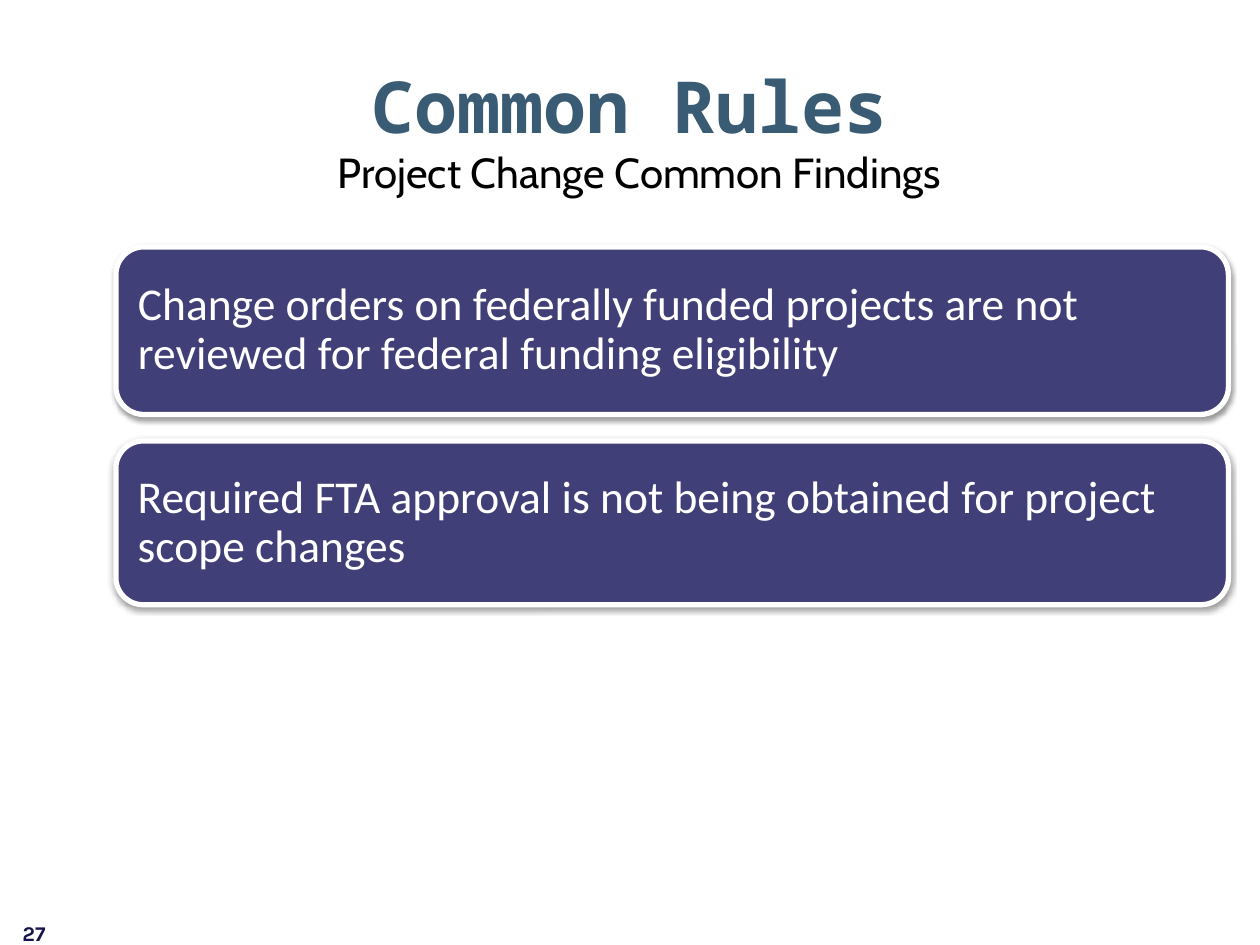
from dataclasses import dataclass

from lxml import etree
from pptx import Presentation
from pptx.dml.color import RGBColor
from pptx.enum.shapes import MSO_SHAPE as Shape
from pptx.enum.text import MSO_ANCHOR as Anchor, PP_ALIGN as Align
from pptx.oxml.ns import qn
from pptx.util import Inches, Pt

WHITE = RGBColor(0xFF, 0xFF, 0xFF)
BLACK = RGBColor(0x00, 0x00, 0x00)
INDIGO = RGBColor(0x41, 0x3F, 0x77)
SLATE = RGBColor(0x39, 0x5B, 0x74)
NAVY = RGBColor(0x17, 0x14, 0x4D)


@dataclass
class Style:
    font: str
    size: float
    color: RGBColor
    bold: bool = False
    align: Align = Align.LEFT


@dataclass
class Label:
    text: str
    left: float
    top: float
    width: float
    height: float
    style: Style


@dataclass
class Finding:
    text: str
    top: float
    height: float


FINDING_STYLE = Style("Calibri", 26, WHITE)

LABELS = [
    Label("Project Change Common Findings", 0.92, 1.11, 8.31, 0.5,
          Style("Cabin", 24, BLACK, align=Align.CENTER)),
    Label("Common Rules", 0.5, 0.44, 9, 1.07,
          Style("Noto Sans Mono", 41, SLATE, True, Align.CENTER)),
    Label("27", 0.08, 7.26, 2.33, 0.4, Style("Karla", 12, NAVY, True)),
]

FINDINGS = [
    Finding("Change orders on federally funded projects are not reviewed "
            "for federal funding eligibility", 1.96, 1.33),
    Finding("Required FTA approval is not being obtained for project "
            "scope changes", 3.5, 1.3),
]


def write_text(tf, text: str, style: Style) -> None:
    tf.word_wrap = True
    tf.text = text
    p = tf.paragraphs[0]
    p.alignment = style.align
    font = p.runs[0].font
    font.name, font.size, font.bold = style.font, Pt(style.size), style.bold
    font.color.rgb = style.color


def add_label(s, label: Label) -> None:
    box = s.shapes.add_textbox(Inches(label.left), Inches(label.top),
                               Inches(label.width), Inches(label.height))
    write_text(box.text_frame, label.text, label.style)


def add_shadow(sp) -> None:
    """Soft black shadow straight below the shape."""
    sp.shadow.inherit = False
    effects = sp._element.spPr.find(qn("a:effectLst"))
    shadow = etree.SubElement(effects, qn("a:outerShdw"), blurRad=str(Pt(3.1)),
                              dist=str(Pt(1.6)), dir="5400000", rotWithShape="0")
    color = etree.SubElement(shadow, qn("a:srgbClr"), val=str(BLACK))
    etree.SubElement(color, qn("a:alpha"), val="38000")


def add_finding(s, finding: Finding) -> None:
    sp = s.shapes.add_shape(Shape.ROUNDED_RECTANGLE, Inches(0.92),
                            Inches(finding.top), Inches(8.83), Inches(finding.height))
    sp.fill.solid()
    sp.fill.fore_color.rgb = INDIGO
    sp.line.color.rgb = WHITE
    sp.line.width = Pt(3)
    add_shadow(sp)
    tf = sp.text_frame
    tf.vertical_anchor = Anchor.MIDDLE
    tf.margin_left = tf.margin_right = tf.margin_top = tf.margin_bottom = Inches(0.11)
    write_text(tf, finding.text, FINDING_STYLE)
    tf.paragraphs[0].line_spacing = 0.9


def main() -> None:
    prs = Presentation()
    prs.slide_width, prs.slide_height = Inches(10), Inches(7.5)
    s = prs.slides.add_slide(prs.slide_layouts[6])

    # Findings
    for finding in FINDINGS:
        add_finding(s, finding)

    # Subtitle, title and page number
    for label in LABELS:
        add_label(s, label)

    prs.save("out.pptx")


if __name__ == "__main__":
    main()
